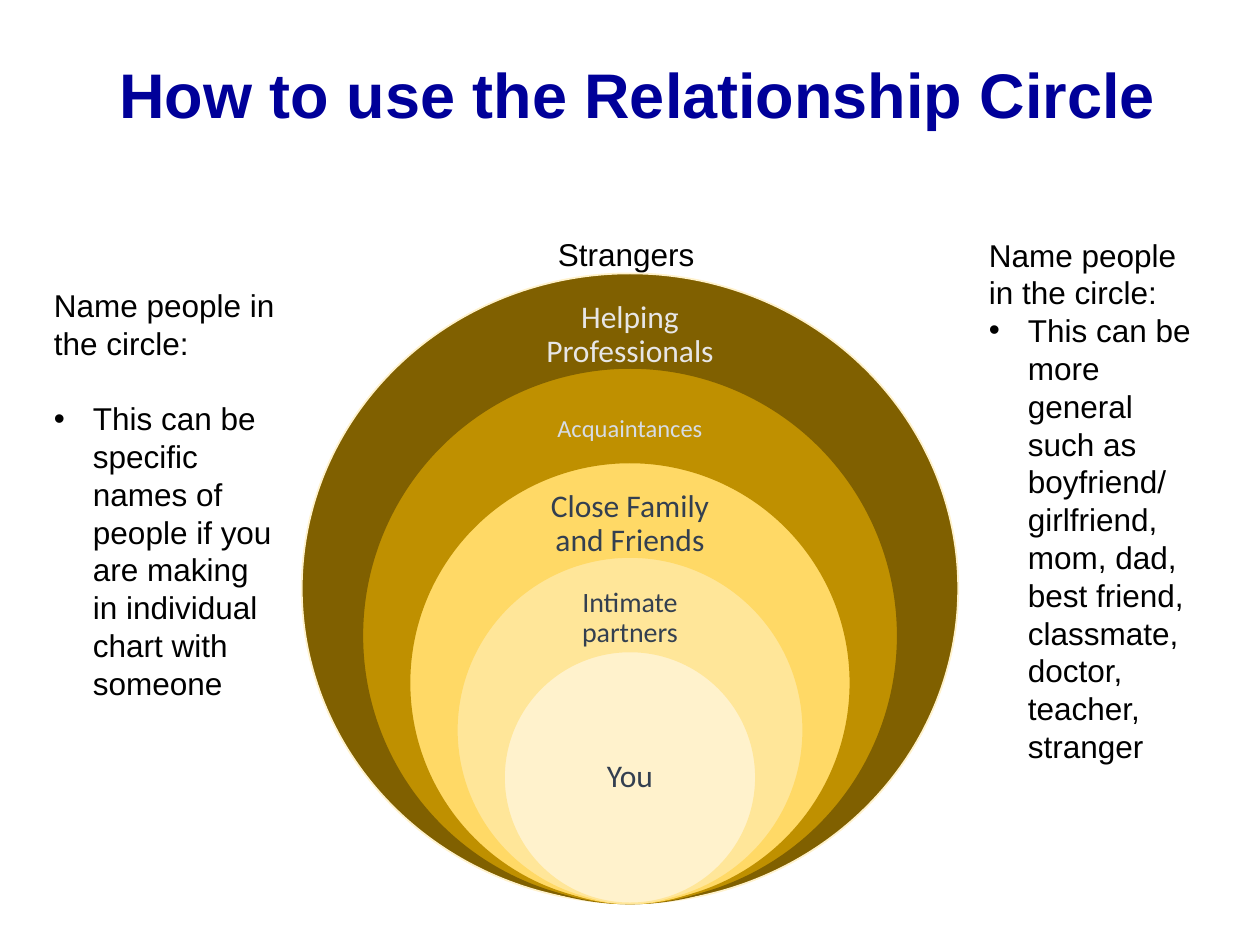
from lxml.etree import SubElement
from pptx import Presentation
from pptx.dml.color import RGBColor
from pptx.enum.shapes import MSO_SHAPE
from pptx.enum.text import MSO_ANCHOR, PP_ALIGN
from pptx.oxml.ns import qn
from pptx.util import Inches, Pt

COLUMNS, ROWS = 100, 75
WIDTH, HEIGHT = Inches(10), Inches(7.5)
CENTER, RING_BOTTOM, RING_TOP, RING_STEP = 50, 71.7, 21.7, 7.5

RINGS = [
    ("Helping Professionals", "806000", "E7E6E6", 18, 52.1, 19.5),
    ("Acquaintances", "BF9000", "D6DCE5", 14, 42.5, 18.3),
    ("Close Family and Friends", "FFD966", "333F50", 18, 35, 18.1),
    ("Intimate partners", "FFE699", "333F50", 16, 27.5, 14.8),
    ("You", "FFF2CC", "333F50", 18, 20, 14.1),
]

PROMPT = "Name people in the circle:"


def color(value):
    return RGBColor.from_string(value)


def place(left, top, width, height):
    return (
        round(left * WIDTH / COLUMNS),
        round(top * HEIGHT / ROWS),
        round(width * WIDTH / COLUMNS),
        round(height * HEIGHT / ROWS),
    )


def style(para, size, value, name="Arial", bold=False):
    para.font.name = name
    para.font.size = Pt(size)
    para.font.bold = bold
    para.font.color.rgb = color(value)


def add_text(shapes, area, text, size, value, name="Arial", bold=False):
    box = shapes.add_textbox(*place(*area))
    frame = box.text_frame
    frame.word_wrap = True
    para = frame.paragraphs[0]
    para.text = text
    style(para, size, value, name, bold)
    return frame


def center_text(frame):
    frame.vertical_anchor = MSO_ANCHOR.MIDDLE
    frame.paragraphs[0].alignment = PP_ALIGN.CENTER
    frame.paragraphs[0].line_spacing = 0.9


def add_title(page, text):
    area = (7.5, 0.5, 86.2, 14.5)
    center_text(add_text(page.shapes, area, text, 36, "000099", bold=True))


def add_ring(shapes, area, fill, outline):
    ring = shapes.add_shape(MSO_SHAPE.OVAL, *place(*area))
    ring.shadow.inherit = False
    ring.fill.solid()
    ring.fill.fore_color.rgb = color(fill)
    ring.line.color.rgb = color(outline)
    ring.line.width = Pt(1)


def add_ring_label(shapes, area, text, size, value):
    frame = add_text(shapes, area, text, size, value, "Calibri")
    center_text(frame)
    inset = Pt(size * 0.56)
    frame.margin_left = frame.margin_right = inset
    frame.margin_top = frame.margin_bottom = inset


def add_relationship_circle(page):
    group = page.shapes.add_group_shape()
    for index, (text, fill, ink, size, width, label_width) in enumerate(RINGS):
        top = RING_TOP + index * RING_STEP
        height = RING_BOTTOM - top
        area = (CENTER - width / 2, top, width, height)
        add_ring(group.shapes, area, fill, RINGS[index - 1][1])
        innermost = index == len(RINGS) - 1
        label_top, label_height = (top + 5, 10) if innermost else (top + 2.45, 4.9)
        label_area = (CENTER - label_width / 2, label_top, label_width, label_height)
        add_ring_label(group.shapes, label_area, text, size, ink)


def add_bullet(frame, text, space_before):
    para = frame.add_paragraph()
    para.text = text
    para.space_before = Pt(space_before)
    properties = para._p.get_or_add_pPr()
    indent = Inches(0.31)
    properties.set("marL", str(indent))
    properties.set("indent", str(-indent))
    SubElement(properties, qn("a:buFont"), typeface="Arial")
    SubElement(properties, qn("a:buChar"), char="•")
    style(para, 18, "000000")


def add_advice(page, area, text, space_before=0):
    frame = add_text(page.shapes, area, PROMPT, 18, "000000")
    add_bullet(frame, text, space_before)


def main():
    deck = Presentation()
    deck.slide_width, deck.slide_height = WIDTH, HEIGHT
    page = deck.slides.add_slide(deck.slide_layouts[6])
    add_text(page.shapes, (43.3, 18.2, 14.2, 4), "Strangers", 18, "000000")
    add_relationship_circle(page)
    add_advice(
        page,
        (77.5, 18.2, 18.3, 49.5),
        "This can be more general such as boyfriend/ girlfriend, mom, dad, "
        "best friend, classmate, doctor, teacher, stranger",
    )
    add_advice(
        page,
        (3.3, 22.2, 20, 34.3),
        "This can be specific names of people if you are making "
        "in individual chart with someone",
        space_before=21.6,
    )
    add_title(page, "How to use the Relationship Circle")
    deck.save("out.pptx")


if __name__ == "__main__":
    main()
